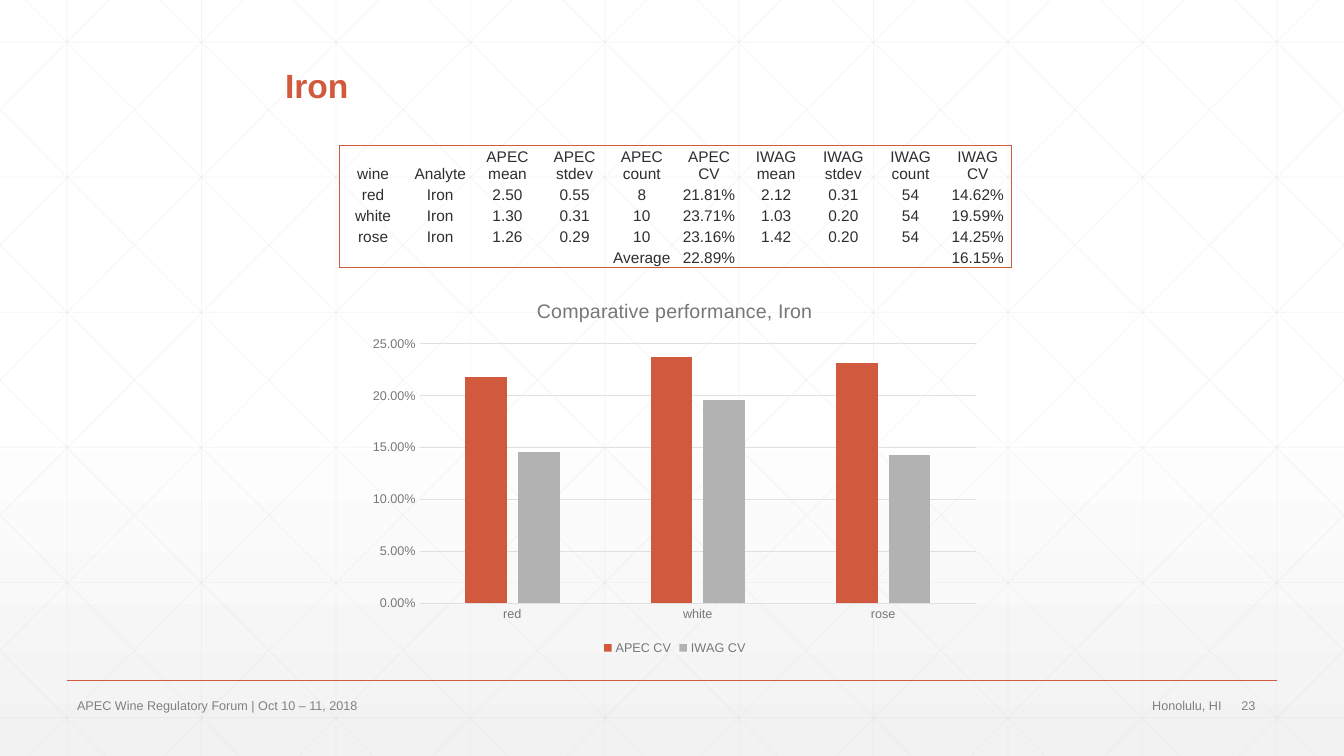
from copy import deepcopy

from lxml import etree
from pptx import Presentation
from pptx.chart.data import CategoryChartData
from pptx.dml.color import RGBColor
from pptx.enum.chart import XL_CHART_TYPE, XL_LEGEND_POSITION, XL_TICK_MARK
from pptx.enum.shapes import MSO_CONNECTOR
from pptx.enum.text import MSO_ANCHOR, PP_ALIGN
from pptx.oxml.ns import qn
from pptx.util import Pt

COLUMNS = XL_CHART_TYPE.COLUMN_CLUSTERED
LEGEND_BOTTOM = XL_LEGEND_POSITION.BOTTOM
NO_TICK = XL_TICK_MARK.NONE
STRAIGHT = MSO_CONNECTOR.STRAIGHT
BOTTOM, MIDDLE = MSO_ANCHOR.BOTTOM, MSO_ANCHOR.MIDDLE
LEFT, CENTER, RIGHT = PP_ALIGN.LEFT, PP_ALIGN.CENTER, PP_ALIGN.RIGHT

WIDTH, HEIGHT = 960, 540
FONT = "Arial"
ORANGE, SILVER, INK = "D15A3E", "B2B2B2", "2D2E2D"
AXIS_GREY, FOOTER_GREY, GRID, PATTERN = "767876", "808080", "DFE0DF", "D9D9D9"
NO_STYLE = "{2D5ABB26-0587-4C30-8999-92F81FD0307C}"

RESULTS = [
    ["wine", "Analyte", "APEC mean", "APEC stdev", "APEC count", "APEC CV",
     "IWAG mean", "IWAG stdev", "IWAG count", "IWAG CV"],
    ["red", "Iron", "2.50", "0.55", "8", "21.81%", "2.12", "0.31", "54", "14.62%"],
    ["white", "Iron", "1.30", "0.31", "10", "23.71%", "1.03", "0.20", "54", "19.59%"],
    ["rose", "Iron", "1.26", "0.29", "10", "23.16%", "1.42", "0.20", "54", "14.25%"],
    ["", "", "", "", "Average", "22.89%", "", "", "", "16.15%"],
]
SHARES = {"APEC CV": (0.218, 0.237, 0.232), "IWAG CV": (0.146, 0.196, 0.143)}


def rgb(code):
    return RGBColor.from_string(code)


def apply(target, values):
    for name, value in values.items():
        setattr(target, name, value)


def set_font(font, size, color, bold=False):
    apply(font, {"name": FONT, "size": Pt(size), "bold": bold})
    font.color.rgb = rgb(color)


def add_rule(slide, start, end, color, weight, opacity=100):
    rule = slide.shapes.add_connector(STRAIGHT, *map(Pt, start + end))
    rule.line.color.rgb = rgb(color)
    rule.line.width = Pt(weight)
    properties = rule._element.spPr
    etree.SubElement(properties, qn("a:effectLst"))
    if opacity < 100:
        paint = properties.find(".//" + qn("a:srgbClr"))
        etree.SubElement(paint, qn("a:alpha"), val=str(opacity * 1000))


def add_text(slide, box, text, size, color, align=LEFT, anchor=MIDDLE, bold=False):
    frame = slide.shapes.add_textbox(*map(Pt, box)).text_frame
    apply(frame, {"word_wrap": True, "vertical_anchor": anchor})
    paragraph = frame.paragraphs[0]
    paragraph.alignment = align
    run = paragraph.add_run()
    run.text = text
    set_font(run.font, size, color, bold)
    return paragraph


def draw_background(slide, width, height):
    # Fade to light grey
    fill = slide.background.fill
    fill.gradient()
    fill.gradient_angle = 270
    stops = slide._element.find(".//" + qn("a:gsLst"))
    stops.append(deepcopy(stops[-1]))
    fade = [(0, "FFFFFF"), (0.53, "FFFFFF"), (1, "F2F2F2")]
    for stop, (position, color) in zip(fill.gradient_stops, fade):
        stop.position = position
        stop.color.rgb = rgb(color)

    # Upright and level lines
    pitch, row_pitch, run = 96, 96.5, 537
    lines = [((48 + pitch * i, 0), (48 + pitch * i, height)) for i in range(10)]
    lines += [((0, 30 + row_pitch * i), (width, 30 + row_pitch * i)) for i in range(6)]

    # Diagonals, cut at the slide edges and mirrored
    for i in range(-5, 10):
        top = 18 + pitch * i
        left, right = max(top, 0), min(top + run, width)
        upper, lower = [(x - top) * height / run for x in (left, right)]
        lines.append(((left, upper), (right, lower)))
        lines.append(((width - left, upper), (width - right, lower)))
    for start, end in lines:
        add_rule(slide, start, end, PATTERN, 0.5, 25)


def draw_footer(slide, left, top, width):
    add_rule(slide, (left, top), (left + width, top), ORANGE, 1)
    text_top, height, number_width, place_width = top + 9.5, 17, 32.4, 344
    right = left + width - number_width
    add_text(slide, (right, text_top, number_width, height), "23", 9, FOOTER_GREY)
    add_text(slide, (left, text_top, 482, height),
             "APEC Wine Regulatory Forum | Oct 10 – 11, 2018", 9, FOOTER_GREY)
    add_text(slide, (right - place_width, text_top, place_width, height),
             "Honolulu, HI", 9, FOOTER_GREY, RIGHT)


def add_border(cell, edges):
    properties = cell._tc.get_or_add_tcPr()
    for index, edge in enumerate(edges):
        line = etree.Element(qn("a:ln" + edge), w=str(Pt(0.5)))
        paint = etree.SubElement(line, qn("a:solidFill"))
        etree.SubElement(paint, qn("a:srgbClr"), val=ORANGE)
        properties.insert(index, line)


def draw_results(slide, left, top, width, row_height):
    rows, columns = len(RESULTS), len(RESULTS[0])
    height = row_height * rows
    frame = slide.shapes.add_table(rows, columns, *map(Pt, (left, top, width, height)))
    table = frame.table
    apply(table, {"first_row": False, "horz_banding": False})
    table._tbl.tblPr.find(qn("a:tableStyleId")).text = NO_STYLE
    for column in table.columns:
        column.width = Pt(width / columns)
    cell_format = {"margin_left": Pt(0.7), "margin_right": Pt(0.7), "margin_top": Pt(0.7),
                   "margin_bottom": 0, "vertical_anchor": BOTTOM}
    for r, values in enumerate(RESULTS):
        table.rows[r].height = Pt(row_height)
        for c, value in enumerate(values):
            cell = table.cell(r, c)
            apply(cell, cell_format)
            cell.fill.background()
            outer = {"L": c == 0, "R": c == columns - 1, "T": r == 0, "B": r == rows - 1}
            add_border(cell, [edge for edge, present in outer.items() if present])
            paragraph = cell.text_frame.paragraphs[0]
            paragraph.alignment = CENTER
            if value:
                run = paragraph.add_run()
                run.text = value
                set_font(run.font, 11, INK)
            else:
                etree.SubElement(paragraph._p, qn("a:endParaRPr"), sz="1100")


def draw_comparison(slide, box):
    data = CategoryChartData(number_format="0.00%")
    data.categories = [wine[0] for wine in RESULTS[1:4]]
    for name, shares in SHARES.items():
        data.add_series(name, shares)
    chart = slide.shapes.add_chart(COLUMNS, *map(Pt, box), data).chart
    set_font(chart.font, 10, INK)

    # Title and legend
    title = chart.chart_title
    title.include_text_frame = True
    run = title.text_frame.paragraphs[0].add_run()
    run.text = "Comparative performance, Iron"
    set_font(run.font, 14, AXIS_GREY)
    chart.has_legend = True
    apply(chart.legend, {"position": LEGEND_BOTTOM, "include_in_layout": False})
    set_font(chart.legend.font, 9, AXIS_GREY)

    # Columns
    plot = chart.plots[0]
    apply(plot, {"gap_width": 219, "overlap": -27, "vary_by_categories": False})
    for series, color in zip(plot.series, (ORANGE, SILVER)):
        series.format.fill.solid()
        series.format.fill.fore_color.rgb = rgb(color)

    # Axes
    share_axis, wine_axis = chart.value_axis, chart.category_axis
    for axis in (share_axis, wine_axis):
        apply(axis, {"major_tick_mark": NO_TICK, "minor_tick_mark": NO_TICK})
        set_font(axis.tick_labels.font, 9, AXIS_GREY)
    apply(share_axis, {"minimum_scale": 0, "maximum_scale": 0.25, "major_unit": 0.05})
    apply(share_axis.tick_labels, {"number_format": "0.00%", "number_format_is_linked": False})
    share_axis.format.line.fill.background()
    for line in (share_axis.major_gridlines.format.line, wine_axis.format.line):
        line.color.rgb = rgb(GRID)
        line.width = Pt(0.75)

    # Plot area as fractions of the chart
    area = chart._chartSpace.find(".//" + qn("c:plotArea"))
    for layout in area.findall(qn("c:layout")):
        area.remove(layout)
    layout = etree.Element(qn("c:layout"))
    manual = etree.SubElement(layout, qn("c:manualLayout"))
    placing = {"layoutTarget": "inner", "xMode": "edge", "yMode": "edge",
               "x": "0.0935", "y": "0.164", "w": "0.886", "h": "0.688"}
    for name, value in placing.items():
        etree.SubElement(manual, qn("c:" + name), val=value)
    area.insert(0, layout)


def main():
    deck = Presentation()
    apply(deck, {"slide_width": Pt(WIDTH), "slide_height": Pt(HEIGHT)})
    slide = deck.slides.add_slide(deck.slide_layouts[6])
    draw_background(slide, WIDTH, HEIGHT)
    draw_footer(slide, 48, 486, 864)
    title = add_text(slide, (196.5, 39.5, 567, 39.5), "Iron", 24, ORANGE,
                     anchor=BOTTOM, bold=True)
    title.line_spacing = 0.9
    draw_results(slide, 242.5, 103.7, 480, 15)
    draw_comparison(slide, (257.8, 201.5, 448.5, 269.5))
    deck.save("out.pptx")


if __name__ == "__main__":
    main()
